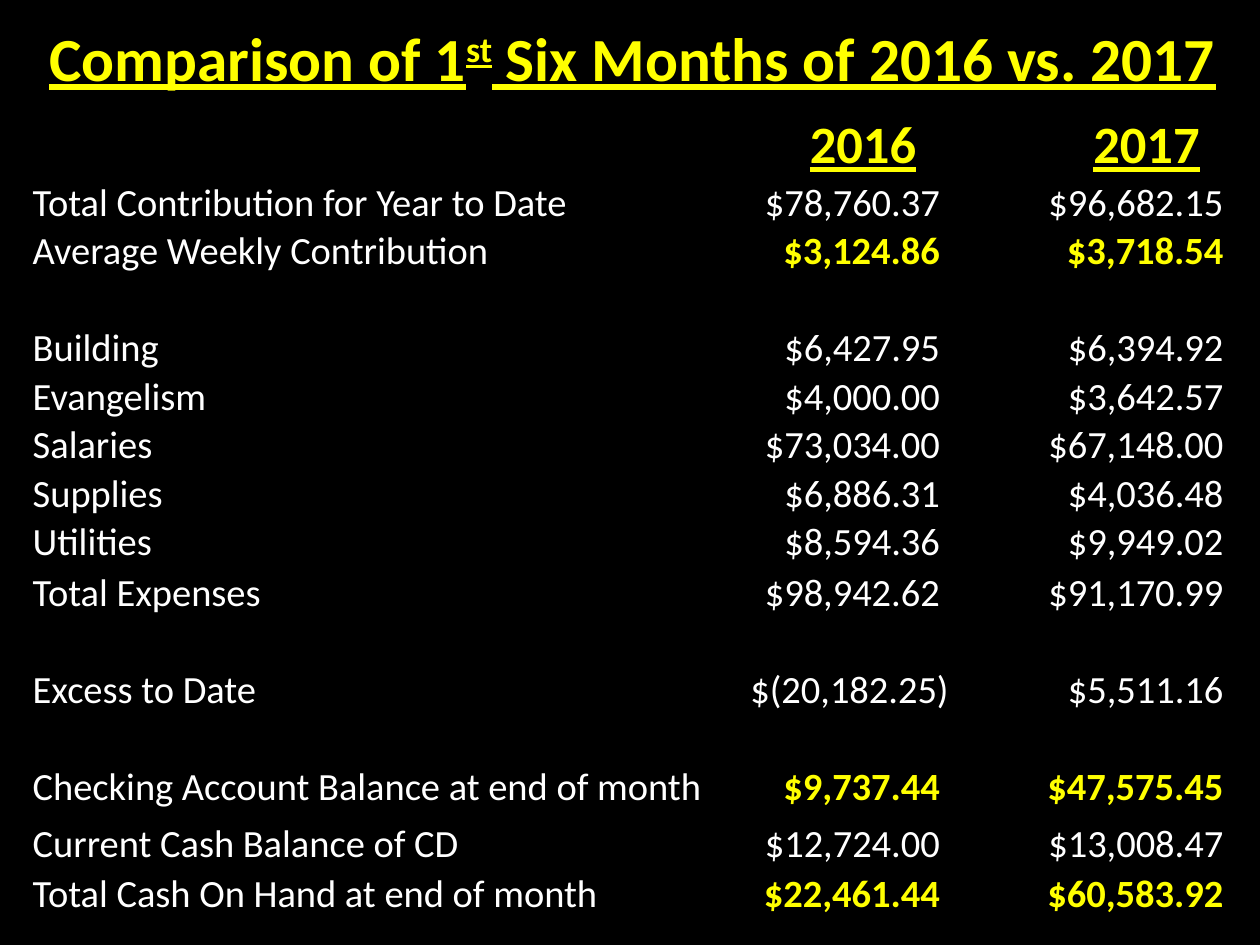
"""Build a slide comparing six months of finances in 2016 and 2017."""
from dataclasses import dataclass

from pptx import Presentation
from pptx.dml.color import RGBColor as RGB
from pptx.enum.text import MSO_ANCHOR as Anchor, PP_ALIGN as Align
from pptx.util import Inches, Pt


@dataclass(frozen=True)
class Theme:
    font: str = "Calibri"
    back: RGB = RGB(0, 0, 0)
    text: RGB = RGB(255, 255, 255)
    accent: RGB = RGB(255, 255, 0)
    title_size: int = 35
    year_size: int = 30
    body_size: int = 22
    no_grid: str = "{2D5ABB26-0587-4C30-8999-92F81FD0307C}"


theme = Theme()
LABEL, FIRST, SECOND = 0, 1, 3
COLUMNS = [5.44, 1.85, 0.4, 1.85]
TOP_ROW, TITLE_ROW, YEAR_ROW, BODY_ROW = 26, 40, 46, 27.75
TALLER = {"Total Expenses": 28.75, "Current Cash Balance of CD": 32.5,
          "Total Cash On Hand at end of month": 28.75}
EDGE, AMOUNT_GAP, YEAR_SHIFT = Inches(0.01), Inches(0.08), Inches(0.48)
BLANK = ("", "", "", False)
RECORDS = [
    ("Total Contribution for Year to Date", "$78,760.37", "$96,682.15", False),
    ("Average Weekly Contribution", "$3,124.86", "$3,718.54", True),
    BLANK,
    ("Building", "$6,427.95", "$6,394.92", False),
    ("Evangelism", "$4,000.00", "$3,642.57", False),
    ("Salaries", "$73,034.00", "$67,148.00", False),
    ("Supplies", "$6,886.31", "$4,036.48", False),
    ("Utilities", "$8,594.36", "$9,949.02", False),
    ("Total Expenses", "$98,942.62", "$91,170.99", False),
    BLANK,
    ("Excess to Date", "$(20,182.25)", "$5,511.16", False),
    BLANK,
    ("Checking Account Balance at end of month", "$9,737.44", "$47,575.45", True),
    ("Current Cash Balance of CD", "$12,724.00", "$13,008.47", False),
    ("Total Cash On Hand at end of month", "$22,461.44", "$60,583.92", True),
]


def write(cell, pieces, size, align, heading=False, strong=False):
    para = cell.text_frame.paragraphs[0]
    para.alignment = align
    for piece in pieces:
        span = para.add_run()
        span.text = piece
        span.font.name = theme.font
        span.font.size = Pt(size)
        span.font.bold = heading or strong
        span.font.underline = heading
        span.font.color.rgb = theme.accent if heading or strong else theme.text
    return para


deck = Presentation()
deck.slide_width, deck.slide_height = Inches(10), Inches(7.5)
page = deck.slides.add_slide(deck.slide_layouts[6])
page.background.fill.solid()
page.background.fill.fore_color.rgb = theme.back

heights = [TOP_ROW, TITLE_ROW, YEAR_ROW]
heights += [TALLER.get(record[0], BODY_ROW) for record in RECORDS]
frame = page.shapes.add_table(len(heights), len(COLUMNS), Inches(0.25), Inches(-0.19),
                              Inches(sum(COLUMNS)), Pt(sum(heights)))
table = frame.table
table.first_row = table.horz_banding = False
table._tbl.tblPr.find("{*}tableStyleId").text = theme.no_grid
for column, width in zip(table.columns, COLUMNS):
    column.width = Inches(width)
for row, height in zip(table.rows, heights):
    row.height = Pt(height)
for cell in table.iter_cells():
    cell.fill.background()
    cell.vertical_anchor = Anchor.BOTTOM
    cell.margin_left = cell.margin_right = cell.margin_top = EDGE
    cell.margin_bottom = 0

for row in (0, 1):
    table.cell(row, 0).merge(table.cell(row, len(COLUMNS) - 1))
title = write(table.cell(1, 0), ["Comparison of 1", "st", " Six Months of 2016 vs. 2017"],
              theme.title_size, Align.CENTER, heading=True)
title.runs[1].font._element.set("baseline", "30000")

for column, year in ((FIRST, "2016"), (SECOND, "2017")):
    cell = table.cell(2, column)
    cell.margin_left = YEAR_SHIFT
    write(cell, [year], theme.year_size, Align.CENTER, heading=True)

for row, (label, first, second, strong) in enumerate(RECORDS, start=3):
    if not label:
        continue
    write(table.cell(row, LABEL), [label], theme.body_size, Align.LEFT)
    for column, amount in ((FIRST, first), (SECOND, second)):
        cell = table.cell(row, column)
        cell.margin_right = EDGE if amount.endswith(")") else AMOUNT_GAP
        write(cell, [amount], theme.body_size, Align.RIGHT, strong=strong)

deck.save("out.pptx")
